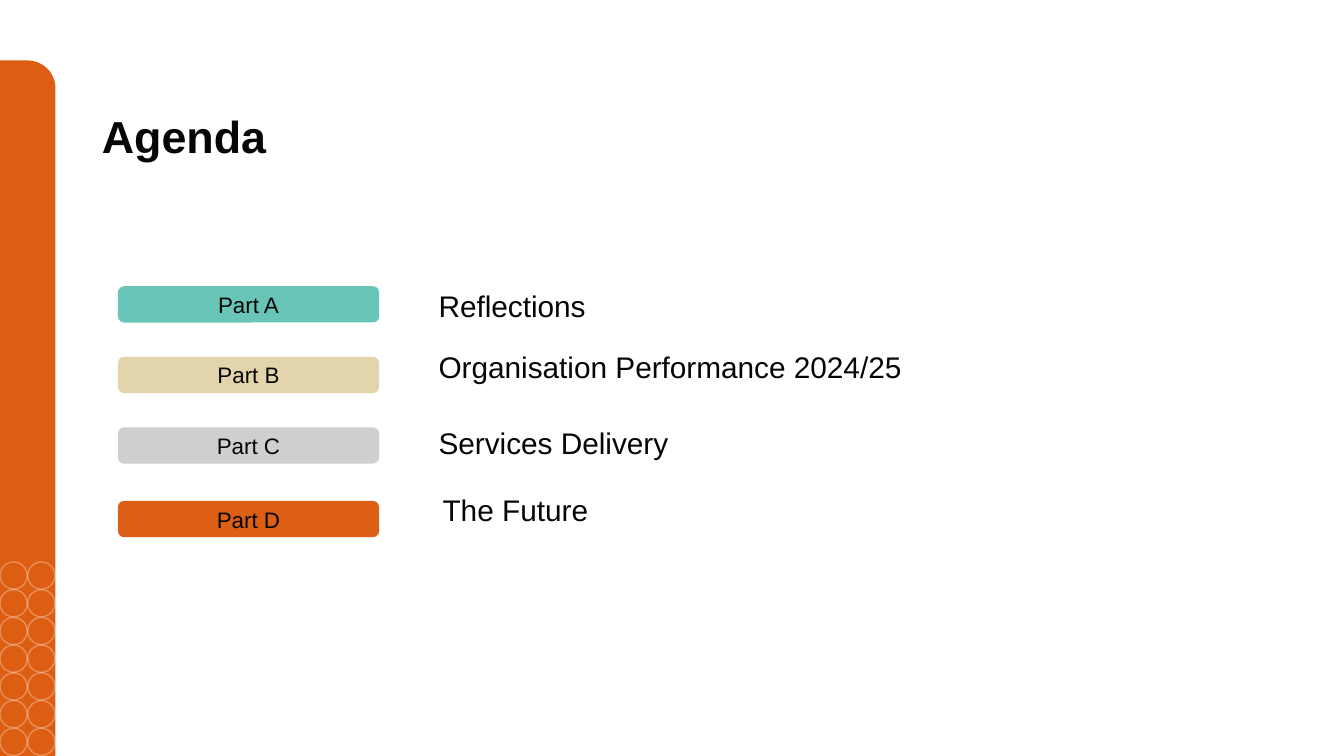
"""Build the agenda slide with its patterned side bar and four labelled parts."""
import pptx
import pptx.dml.color
import pptx.enum.shapes
import pptx.enum.text
import pptx.oxml
import pptx.oxml.ns
import pptx.util

Inches = pptx.util.Inches
Pt = pptx.util.Pt
RGBColor = pptx.dml.color.RGBColor
SHAPE = pptx.enum.shapes.MSO_SHAPE
ALIGN = pptx.enum.text.PP_ALIGN

INK = RGBColor(0x06, 0x06, 0x06)
WHITE = RGBColor(0xFF, 0xFF, 0xFF)
BAR_ORANGE = RGBColor(0xDD, 0x5E, 0x12)
TEAL = RGBColor(0x69, 0xC5, 0xB8)
SAND = RGBColor(0xE2, 0xD4, 0xAB)
GREY = RGBColor(0xD0, 0xCE, 0xCE)
ORANGE = RGBColor(0xDD, 0x5E, 0x15)

HEADING = "Agenda"
# Part label, colour, label top, topic, topic left, topic top, topic width
PARTS = [
    ("Part A", TEAL, 2.84, "Reflections", 4.32, 2.82, 4.5),
    ("Part B", SAND, 3.54, "Organisation Performance 2024/25", 4.32, 3.43, 6.15),
    ("Part C", GREY, 4.24, "Services Delivery", 4.32, 4.18, 4.5),
    ("Part D", ORANGE, 4.97, "The Future", 4.36, 4.85, 4.95),
]

SLIDE_W, SLIDE_H = 13.33, 7.5
BAR_W, BAR_TOP = 0.55, 0.6
RING_COLUMNS, RING_ROWS = 2, 7
RING_SIZE = 0.27
RING_STEP = BAR_W / RING_COLUMNS

deck = pptx.Presentation()
deck.slide_width = Inches(SLIDE_W)
deck.slide_height = Inches(SLIDE_H)
slide = deck.slides.add_slide(deck.slide_layouts[6])


def add_preset(preset, left, top, width, height, color=None):
    """Add a borderless preset shape, filled when a colour is given."""
    shape = slide.shapes.add_shape(
        preset, Inches(left), Inches(top), Inches(width), Inches(height))
    shape.shadow.inherit = False
    shape.line.fill.background()
    if color is None:
        shape.fill.background()
    else:
        shape.fill.solid()
        shape.fill.fore_color.rgb = color
    return shape


def add_ring(left, top):
    """Add one translucent white ring of the side bar pattern."""
    ring = add_preset(SHAPE.OVAL, left, top, RING_SIZE, RING_SIZE)
    ring.line.color.rgb = WHITE
    ring.line.width = Pt(1)
    tint = ring.line.fill._xPr.find(".//" + pptx.oxml.ns.qn("a:srgbClr"))
    tint.append(pptx.oxml.parse_xml(
        "<a:alpha %s val='30000'/>" % pptx.oxml.ns.nsdecls("a")))


def add_text_box(left, top, width, height):
    """Add an empty text box."""
    return slide.shapes.add_textbox(
        Inches(left), Inches(top), Inches(width), Inches(height))


def write(text, holder, size, bold=False, align=ALIGN.LEFT, spacing=None):
    """Write one vertically centred paragraph into a shape or text box."""
    frame = holder.text_frame
    frame.word_wrap = True
    frame.vertical_anchor = pptx.enum.text.MSO_ANCHOR.MIDDLE
    frame.margin_left = frame.margin_right = Inches(0.03)
    frame.margin_top = frame.margin_bottom = Inches(0.03)
    paragraph = frame.paragraphs[0]
    paragraph.alignment = align
    paragraph.line_spacing = spacing
    run = paragraph.add_run()
    run.text = text
    run.font.name = "Arial"
    run.font.size = Pt(size)
    run.font.bold = bold
    run.font.color.rgb = INK


side_bar = add_preset(SHAPE.ROUND_1_RECTANGLE, 0, BAR_TOP, BAR_W,
                      SLIDE_H - BAR_TOP, BAR_ORANGE)
side_bar.adjustments[0] = 0.5
for row in range(RING_ROWS):
    for column in range(RING_COLUMNS):
        add_ring(column * RING_STEP, SLIDE_H - (RING_ROWS - row) * RING_STEP)

write(HEADING, add_text_box(0.98, 0.88, 12.35, 0.99), size=32, bold=True, spacing=0.9)

for label, color, label_top, topic, topic_left, topic_top, topic_width in PARTS:
    tag = add_preset(SHAPE.ROUNDED_RECTANGLE, 1.17, label_top, 2.59, 0.36, color)
    write(label, tag, size=16, align=ALIGN.CENTER)
    write(topic, add_text_box(topic_left, topic_top, topic_width, 0.42), size=21.3)

deck.save("out.pptx")
